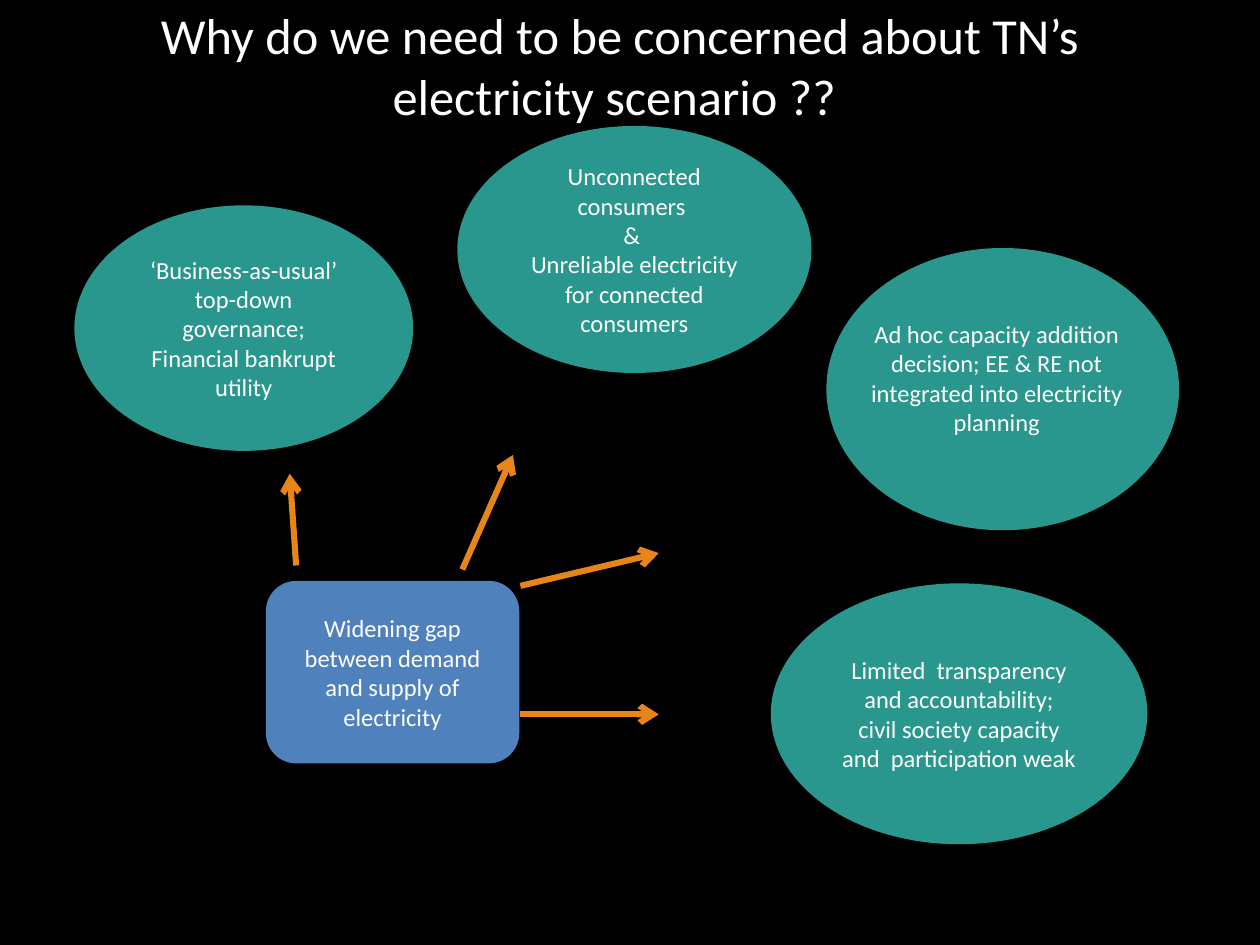
from dataclasses import dataclass

from lxml.etree import SubElement
from pptx import Presentation
from pptx.dml.color import RGBColor
from pptx.enum.shapes import MSO_CONNECTOR, MSO_SHAPE
from pptx.enum.text import MSO_ANCHOR as Anchor, MSO_AUTO_SIZE as AutoSize, PP_ALIGN as Align
from pptx.oxml.ns import qn
from pptx.util import Cm, Pt


@dataclass(frozen=True)
class Theme:
    background: RGBColor = RGBColor(0x00, 0x00, 0x00)
    text: RGBColor = RGBColor(0xFF, 0xFF, 0xFF)
    core: RGBColor = RGBColor(0x4F, 0x81, 0xBD)
    concern: RGBColor = RGBColor(0x29, 0x97, 0x8D)
    arrow: RGBColor = RGBColor(0xE7, 0x85, 0x19)
    font: str = "Calibri"
    title_size: float = 28.8
    body_size: float = 14
    arrow_width: float = 3.5


@dataclass(frozen=True)
class Area:
    left: float
    top: float
    width: float
    height: float

    def lengths(self) -> tuple:
        return Cm(self.left), Cm(self.top), Cm(self.width), Cm(self.height)


@dataclass(frozen=True)
class Bubble:
    area: Area
    lines: tuple[str, ...] = ()
    kind: MSO_SHAPE = MSO_SHAPE.OVAL
    fill: RGBColor = Theme.concern


@dataclass(frozen=True)
class Arrow:
    start: tuple[float, float]
    end: tuple[float, float]


THEME = Theme()
TITLE = "Why do we need to be concerned about TN’s electricity scenario ?? "
TITLE_AREA = Area(1.07, 0.25, 22.86, 2.11)
CAPACITY_TEXT = ("Ad hoc capacity addition decision; EE & RE not integrated "
                 "into electricity planning")
CAPACITY_TEXT_AREA = Area(17.07, 6.3, 6.05, 2.64)

BUBBLES = (
    Bubble(Area(5.36, 11.71, 5.11, 3.68),
           ("Widening gap between demand and supply of electricity",),
           MSO_SHAPE.ROUNDED_RECTANGLE, THEME.core),
    Bubble(Area(16.66, 5, 7.11, 5.69)),
    Bubble(Area(1.5, 4.14, 6.83, 4.95),
           ("‘Business-as-usual’ top-down governance; Financial bankrupt utility",)),
    Bubble(Area(15.54, 11.76, 7.59, 5.26),
           ("Limited  transparency and accountability;",
            "civil society capacity and  participation weak")),
    Bubble(Area(9.22, 2.54, 7.14, 4.98),
           ("Unconnected consumers ", "& ",
            "Unreliable electricity for connected consumers")),
)

ARROWS = (
    Arrow((5.97, 11.4), (5.84, 9.55)),
    Arrow((10.49, 11.81), (13.28, 11.15)),
    Arrow((10.49, 14.4), (13.28, 14.4)),
    Arrow((9.32, 11.48), (10.34, 9.17)),
)


def write_lines(frame, lines: tuple[str, ...], size: float, anchor: Anchor) -> None:
    frame.word_wrap = True
    frame.vertical_anchor = anchor
    for index, line in enumerate(lines):
        para = frame.paragraphs[0] if index == 0 else frame.add_paragraph()
        para.alignment = Align.CENTER
        span = para.add_run()
        span.text = line
        span.font.name = THEME.font
        span.font.size = Pt(size)
        span.font.color.rgb = THEME.text


def add_title(page) -> None:
    title = page.shapes.title
    title.left, title.top, title.width, title.height = TITLE_AREA.lengths()
    write_lines(title.text_frame, (TITLE,), THEME.title_size, Anchor.MIDDLE)
    title.text_frame.auto_size = AutoSize.NONE


def add_bubble(page, bubble: Bubble) -> None:
    shape = page.shapes.add_shape(bubble.kind, *bubble.area.lengths())
    shape.shadow.inherit = False
    shape.fill.solid()
    shape.fill.fore_color.rgb = bubble.fill
    shape.line.fill.background()
    write_lines(shape.text_frame, bubble.lines, THEME.body_size, Anchor.MIDDLE)


def add_arrow(page, arrow: Arrow) -> None:
    points = (Cm(value) for value in arrow.start + arrow.end)
    connector = page.shapes.add_connector(MSO_CONNECTOR.STRAIGHT, *points)
    connector.line.color.rgb = THEME.arrow
    connector.line.width = Pt(THEME.arrow_width)
    SubElement(connector.line._get_or_add_ln(), qn("a:tailEnd"), type="arrow")
    SubElement(connector._element.spPr, qn("a:effectLst"))


def add_capacity_text(page) -> None:
    box = page.shapes.add_textbox(*CAPACITY_TEXT_AREA.lengths())
    write_lines(box.text_frame, (CAPACITY_TEXT,), THEME.body_size, Anchor.TOP)
    box.text_frame.auto_size = AutoSize.SHAPE_TO_FIT_TEXT


def main() -> None:
    deck = Presentation()
    deck.slide_width, deck.slide_height = Cm(25.4), Cm(19.05)
    page = deck.slides.add_slide(deck.slide_layouts.get_by_name("Title Only"))
    page.background.fill.solid()
    page.background.fill.fore_color.rgb = THEME.background
    add_title(page)
    for bubble in BUBBLES:
        add_bubble(page, bubble)
    for arrow in ARROWS:
        add_arrow(page, arrow)
    add_capacity_text(page)
    deck.save("out.pptx")


if __name__ == "__main__":
    main()
